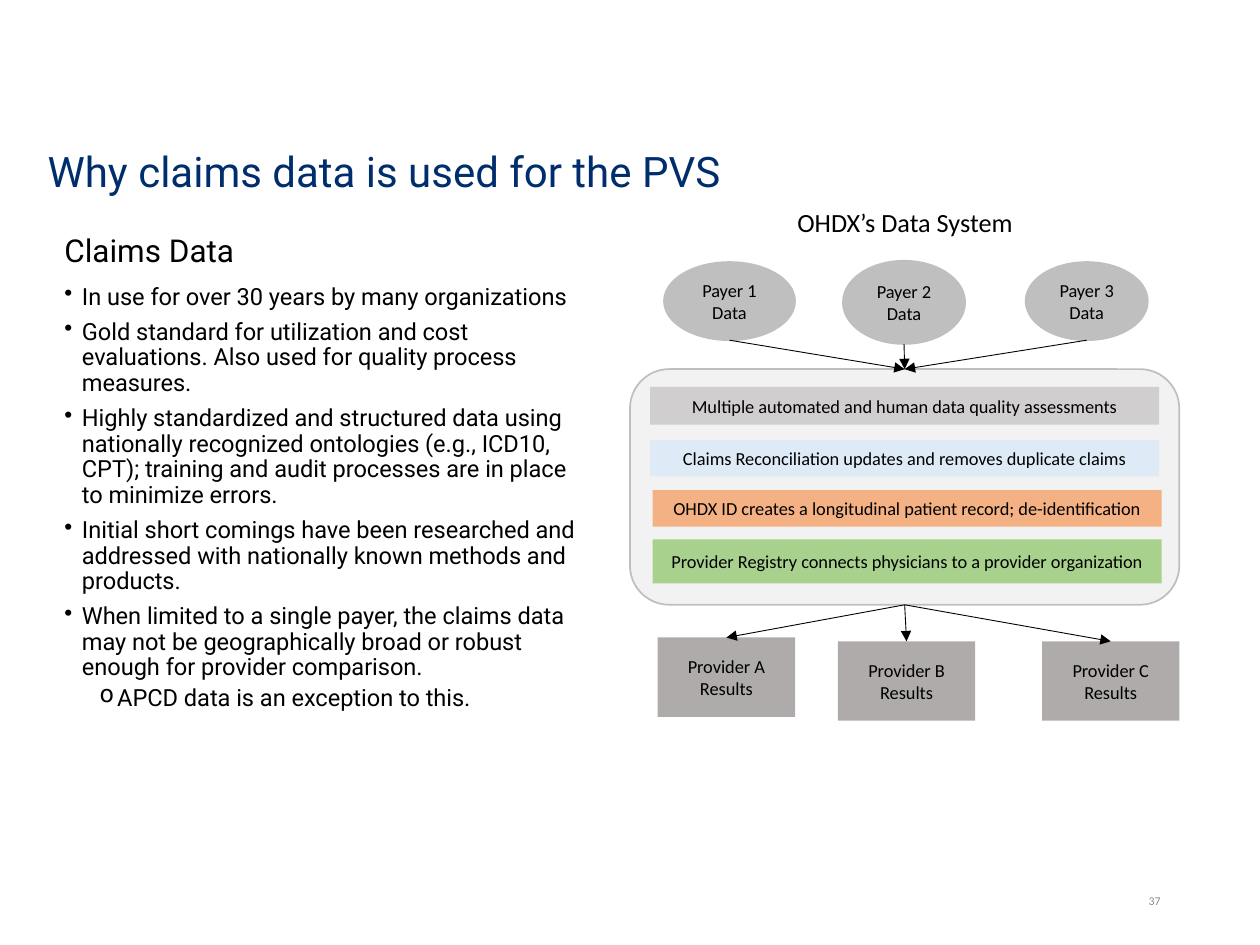
from pptx import Presentation
from pptx.dml.color import RGBColor
from pptx.enum.shapes import MSO_CONNECTOR, MSO_SHAPE
from pptx.enum.text import MSO_ANCHOR, PP_ALIGN
from pptx.oxml.ns import qn
from pptx.util import Inches, Pt
from lxml import etree

RECT, OVAL, ROUND = MSO_SHAPE.RECTANGLE, MSO_SHAPE.OVAL, MSO_SHAPE.ROUNDED_RECTANGLE
STRAIGHT = MSO_CONNECTOR.STRAIGHT
TOP, MIDDLE = MSO_ANCHOR.TOP, MSO_ANCHOR.MIDDLE
LEFT, CENTER, RIGHT = PP_ALIGN.LEFT, PP_ALIGN.CENTER, PP_ALIGN.RIGHT
TOP_SIDE, BOTTOM_SIDE = 0, 2

BULLETS = [
    "In use for over 30 years by many organizations",
    "Gold standard for utilization and cost evaluations. Also used for quality "
    "process measures.",
    "Highly standardized and structured data using nationally recognized ontologies "
    "(e.g., ICD10, CPT); training and audit processes are in place to minimize errors.",
    "Initial short comings have been researched and addressed with nationally known "
    "methods and products.",
    "When limited to a single payer, the claims data may not be geographically broad "
    "or robust enough for provider comparison.",
]
SUB = "APCD data is an exception to this."

# left, top, width, height within the diagram
PAYERS = [(0.27, 0.49, 1.04, 0.62), (1.69, 0.48, 0.97, 0.66), (3.14, 0.49, 0.97, 0.62)]
RESULTS = [("A", 0.22, 3.47), ("B", 1.65, 3.5), ("C", 3.27, 3.5)]
# left, top, height, fill, text within the panel
STEPS = [
    (0.16, 0.14, 0.3, "D0CECE", "Multiple automated and human data quality assessments"),
    (0.16, 0.56, 0.29, "DEEBF7",
     "Claims Reconciliation updates and removes duplicate claims"),
    (0.18, 0.96, 0.29, "F4B183",
     "OHDX ID creates a longitudinal patient record; de-identification"),
    (0.18, 1.35, 0.35, "A9D18E",
     "Provider Registry connects physicians to a provider organization"),
]


def color(code):
    return RGBColor.from_string(code)


def style(para, size, font="Calibri", fill="000000", align=LEFT):
    para.alignment = align
    para.font.size = Pt(size)
    para.font.name = font
    para.font.color.rgb = color(fill)


def add_text(slide, box, text, size, font="Calibri", fill="000000",
             align=LEFT, anchor=TOP):
    frame = slide.shapes.add_textbox(*map(Inches, box)).text_frame
    frame.word_wrap = True
    frame.vertical_anchor = anchor
    frame.text = text
    style(frame.paragraphs[0], size, font, fill, align)
    return frame


def add_block(slide, kind, box, fill, text="", line=None):
    shape = slide.shapes.add_shape(kind, *map(Inches, box))
    shape.shadow.inherit = False
    shape.fill.solid()
    shape.fill.fore_color.rgb = color(fill)
    if line:
        shape.line.color.rgb = color(line)
        shape.line.width = Pt(1)
    else:
        shape.line.fill.background()
    if text:
        frame = shape.text_frame
        frame.word_wrap = True
        frame.vertical_anchor = MIDDLE
        frame.text = text
        for para in frame.paragraphs:
            style(para, 10.5, align=CENTER)
    return shape


def add_arrow(slide, start, end):
    """Draw an arrow from the bottom of one shape to the top of another."""
    arrow = slide.shapes.add_connector(
        STRAIGHT, start.left + start.width // 2, start.top + start.height,
        end.left + end.width // 2, end.top)
    # The bottom of an ellipse has another site number than that of a rectangle.
    if start.auto_shape_type != OVAL:
        arrow.begin_connect(start, BOTTOM_SIDE)
    arrow.end_connect(end, TOP_SIDE)
    arrow.line.color.rgb = color("000000")
    arrow.line.width = Pt(0.5)
    etree.SubElement(arrow.line._get_or_add_ln(), qn("a:tailEnd"), type="triangle")
    etree.SubElement(arrow._element.spPr, qn("a:effectLst"))


def add_bullet(para, mark, indent):
    props = para._p.get_or_add_pPr()
    props.set("marL", str(Inches(indent)))
    props.set("indent", str(Inches(-0.14)))
    etree.SubElement(props, qn("a:buChar"), char=mark)


def set_insets(frame):
    frame.margin_left = frame.margin_right = Inches(0.07)
    frame.margin_top = frame.margin_bottom = Inches(0.04)


def add_claims(slide, left, top, width, height):
    head = 0.39
    frame = add_text(slide, (left, top, width, head), "Claims Data", 18, "Roboto")
    set_insets(frame)
    frame.paragraphs[0].line_spacing = 0.9

    box = (left, top + head, width, height - head)
    frame = add_text(slide, box, "\n".join(BULLETS + [SUB]), 13.5, "Roboto")
    set_insets(frame)
    for i, para in enumerate(frame.paragraphs):
        sub = i == len(BULLETS)
        para.level = int(sub)
        para.line_spacing = 0.9
        if i:
            para.space_before = Pt(2.8 if sub else 5.6)
        add_bullet(para, "o" if sub else "•", 0.42 if sub else 0.14)
        style(para, 13.5, "Roboto")


def add_panel(slide, left, top, width, height):
    panel = add_block(slide, ROUND, (left, top, width, height), "F2F2F2", line="BFBFBF")
    for x, y, tall, fill, text in STEPS:
        add_block(slide, RECT, (left + x, top + y, 4.04, tall), fill, text)
    return panel


def add_diagram(slide, left, top, width):
    """Payers feed the panel of steps, which feeds the provider results."""
    add_text(slide, (left + 1.23, top, 2.16, 0.35), "OHDX’s Data System", 15)
    panel = add_panel(slide, left, top + 1.34, width, 1.87)
    for i, (x, y, wide, tall) in enumerate(PAYERS, 1):
        payer = add_block(slide, OVAL, (left + x, top + y, wide, tall), "BFBFBF",
                          f"Payer {i}\nData", "BFBFBF")
        add_arrow(slide, payer, panel)
    for name, x, y in RESULTS:
        result = add_block(slide, RECT, (left + x, top + y, 1.09, 0.63), "AFABAB",
                           f"Provider {name} Results")
        add_arrow(slide, panel, result)


def main():
    deck = Presentation()
    deck.slide_width, deck.slide_height = Inches(10), Inches(7.5)
    slide = deck.slides.add_slide(deck.slide_layouts[6])
    title = add_text(slide, (0.28, 1.07, 9.43, 0.62),
                     "Why claims data is used for the PVS", 24, "Roboto", "002E6C",
                     anchor=MIDDLE)
    title.paragraphs[0].line_spacing = 0.9
    add_claims(slide, 0.44, 1.83, 4.31, 3.96)
    add_diagram(slide, 5, 1.59, 4.36)
    add_text(slide, (7.06, 6.95, 2.25, 0.4), "37", 6.8, fill="8C8C8C",
             align=RIGHT, anchor=MIDDLE)
    deck.save("out.pptx")


if __name__ == "__main__":
    main()
